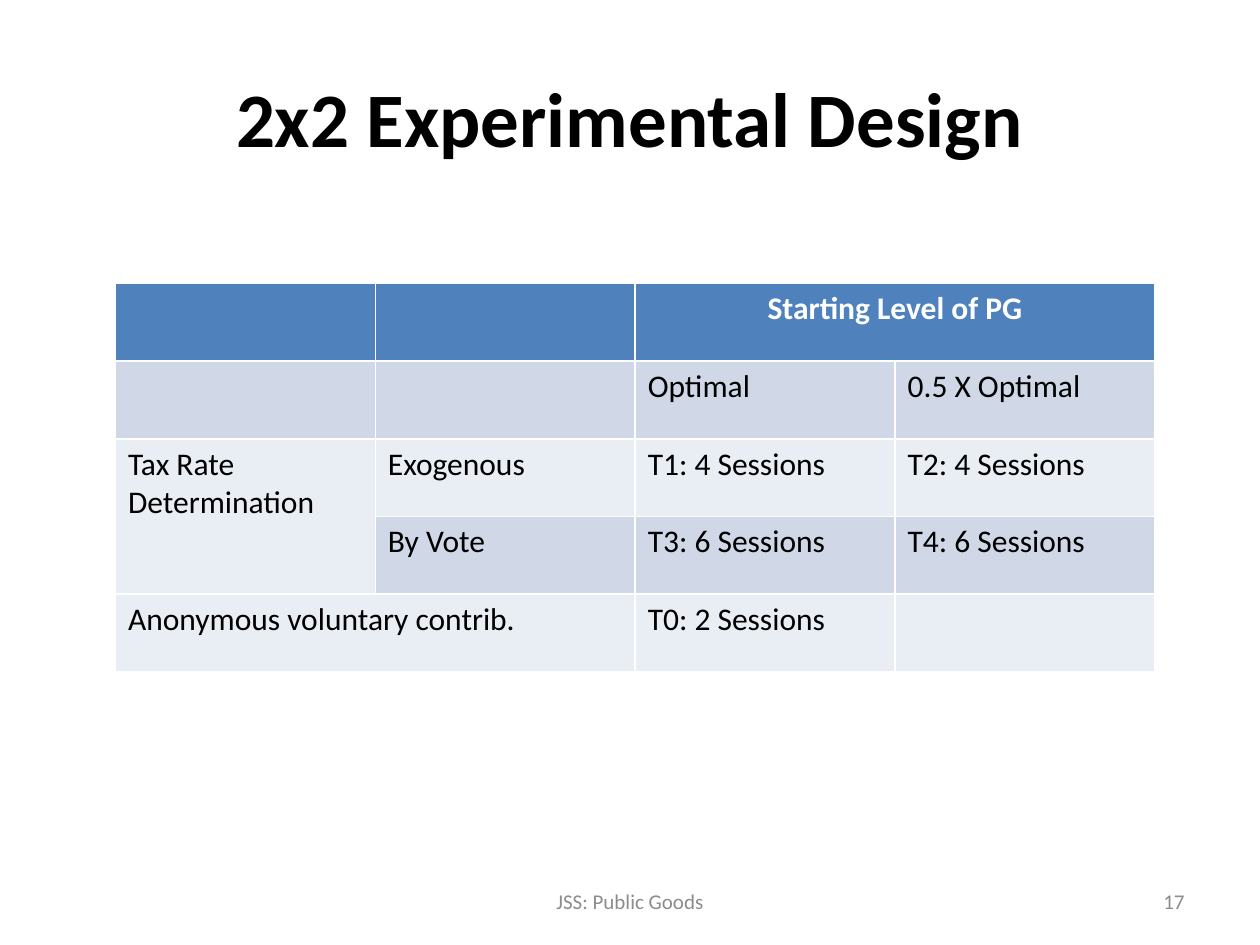
from pptx import Presentation
from pptx.dml.color import RGBColor
from pptx.enum.text import MSO_ANCHOR, PP_ALIGN
from pptx.util import Pt


def add_run(paragraph, text, size, color, bold=False):
    run = paragraph.add_run()
    run.text = text
    run.font.name = "Calibri"
    run.font.size = Pt(size)
    run.font.bold = bold
    run.font.color.rgb = RGBColor.from_string(color)


presentation = Presentation()
presentation.slide_width = Pt(720)
presentation.slide_height = Pt(540)
slide = presentation.slides.add_slide(presentation.slide_layouts[6])

text_boxes = [
    ("2x2 Experimental Design", 36, 21.6, 648, 90, PP_ALIGN.CENTER, 44, "000000", True),
    ("JSS: Public Goods", 246, 500.5, 228, 28.75, PP_ALIGN.CENTER, 12, "8C8C8C", False),
    ("17", 516, 500.5, 168, 28.75, PP_ALIGN.RIGHT, 12, "8C8C8C", False),
]
for text, left, top, width, height, alignment, size, color, bold in text_boxes:
    shape = slide.shapes.add_textbox(Pt(left), Pt(top), Pt(width), Pt(height))
    shape.text_frame.word_wrap = True
    shape.text_frame.vertical_anchor = MSO_ANCHOR.MIDDLE
    paragraph = shape.text_frame.paragraphs[0]
    paragraph.alignment = alignment
    add_run(paragraph, text, size, color, bold)

design = [
    ["", "", "Starting Level of PG", ""],
    ["", "", "Optimal", "0.5 X Optimal"],
    ["Tax Rate Determination", "Exogenous", "T1: 4 Sessions", "T2: 4 Sessions"],
    ["", "By Vote", "T3: 6 Sessions", "T4: 6 Sessions"],
    ["Anonymous voluntary contrib.", "", "T0: 2 Sessions", ""],
]
row_fills = ["4F81BD", "D0D8E8", "E9EDF4", "D0D8E8", "E9EDF4"]
table = slide.shapes.add_table(5, 4, Pt(66), Pt(162), Pt(594), Pt(222)).table

for row_index, (row, fill) in enumerate(zip(design, row_fills)):
    header = row_index == 0
    for column_index, text in enumerate(row):
        cell = table.cell(row_index, column_index)
        cell.fill.solid()
        cell.fill.fore_color.rgb = RGBColor.from_string(fill)
        if text:
            paragraph = cell.text_frame.paragraphs[0]
            paragraph.alignment = PP_ALIGN.CENTER if header else PP_ALIGN.LEFT
            add_run(paragraph, text, 18, "FFFFFF" if header else "000000", header)

for first, last in [((0, 2), (0, 3)), ((2, 0), (3, 0)), ((4, 0), (4, 1))]:
    table.cell(*first).merge(table.cell(*last))

presentation.save("out.pptx")
